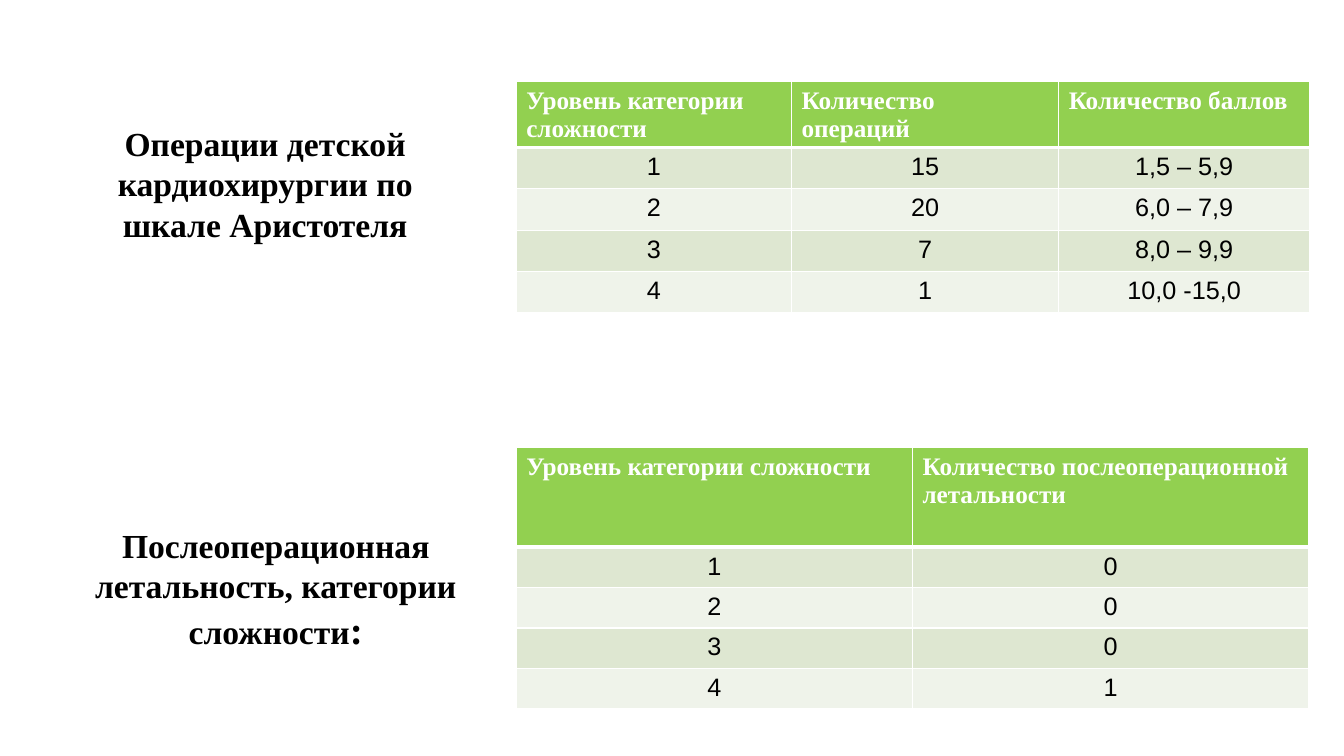
from dataclasses import dataclass

from lxml.etree import SubElement
from pptx import Presentation
from pptx.dml.color import RGBColor
from pptx.enum.text import MSO_ANCHOR, MSO_AUTO_SIZE, PP_ALIGN
from pptx.oxml.ns import qn
from pptx.slide import Slide
from pptx.table import _Cell
from pptx.text.text import TextFrame, _Paragraph
from pptx.util import Inches, Pt

SERIF, SANS = "Times New Roman", "Arial"
BLACK, WHITE, GREEN = "000000", "FFFFFF", "92D050"
BANDS = ("DEE7D1", "EFF3EA")
TABLE_LEFT = 5.12


@dataclass(frozen=True)
class ScaleTable:
    top: float
    widths: tuple[float, ...]
    header_height: float
    row_height: float
    rows: tuple[tuple[str, ...], ...]


MORTALITY = ScaleTable(4.44, (3.93, 3.93), 0.99, 0.4, (
    ("Уровень категории сложности", "Количество послеоперационной летальности"),
    ("1", "0"),
    ("2", "0"),
    ("3", "0"),
    ("4", "1"),
))
OPERATIONS = ScaleTable(0.81, (2.73, 2.65, 2.49), 0.65, 0.41, (
    ("Уровень категории сложности", "Количество операций", "Количество баллов"),
    ("1", "15", "1,5 – 5,9"),
    ("2", "20", "6,0 – 7,9"),
    ("3", "7", "8,0 – 9,9"),
    ("4", "1", "10,0 -15,0"),
))


def color(value: str) -> RGBColor:
    return RGBColor.from_string(value)


def add_span(para: _Paragraph, text: str, size: float, font: str, ink: str, bold: bool) -> None:
    span = para.add_run()
    span.text = text
    span.font.size = Pt(size)
    span.font.name = font
    span.font.bold = bold
    span.font.color.rgb = color(ink)


def fill_caption(frame: TextFrame, anchor: MSO_ANCHOR, spans: tuple[tuple[str, float], ...]) -> None:
    frame.word_wrap = True
    frame.auto_size = MSO_AUTO_SIZE.NONE
    frame.vertical_anchor = anchor
    para = frame.paragraphs[0]
    para.alignment = PP_ALIGN.CENTER
    for text, size in spans:
        add_span(para, text, size, SERIF, BLACK, True)


def set_borders(cell: _Cell, top: float, bottom: float) -> None:
    """Draw white cell edges; top and bottom are widths in points."""
    properties = cell._tc.get_or_add_tcPr()
    for side, width in (("L", 1), ("R", 1), ("T", top), ("B", bottom)):
        line = SubElement(properties, qn(f"a:ln{side}"), w=str(Pt(width)))
        fill = SubElement(line, qn("a:solidFill"))
        SubElement(fill, qn("a:srgbClr"), val=WHITE)


def add_scale_table(slide: Slide, data: ScaleTable) -> None:
    heights = [data.header_height] + [data.row_height] * (len(data.rows) - 1)
    table = slide.shapes.add_table(
        len(data.rows), len(data.widths), Inches(TABLE_LEFT), Inches(data.top),
        Inches(sum(data.widths)), Inches(sum(heights)),
    ).table
    for column, width in zip(table.columns, data.widths):
        column.width = Inches(width)
    for index, (height, texts) in enumerate(zip(heights, data.rows)):
        table.rows[index].height = Inches(height)
        header = index == 0
        for column_index, text in enumerate(texts):
            cell = table.cell(index, column_index)
            set_borders(cell, 3 if index == 1 else 1, 3 if header else 1)
            cell.fill.solid()
            cell.fill.fore_color.rgb = color(GREEN if header else BANDS[(index - 1) % 2])
            para = cell.text_frame.paragraphs[0]
            para.alignment = PP_ALIGN.LEFT if header else PP_ALIGN.CENTER
            add_span(para, text, 18, SERIF if header else SANS, WHITE if header else BLACK, header)


def main() -> None:
    deck = Presentation()
    deck.slide_width, deck.slide_height = Inches(13.33), Inches(7.5)
    page = deck.slides.add_slide(deck.slide_layouts[5])

    title = page.shapes.title
    title.left, title.top = Inches(0.62), Inches(1.85)
    title.width, title.height = Inches(4.12), Inches(0.62)
    title.text_frame.margin_right = Inches(0.2)
    fill_caption(title.text_frame, MSO_ANCHOR.BOTTOM,
                 (("Операции детской кардиохирургии по шкале Аристотеля", 24),))

    add_scale_table(page, MORTALITY)
    add_scale_table(page, OPERATIONS)

    box = page.shapes.add_textbox(Inches(0.73), Inches(5.17), Inches(4.01), Inches(1.34))
    fill_caption(box.text_frame, MSO_ANCHOR.MIDDLE,
                 (("Послеоперационная летальность, категории сложности", 24), (":", 28)))

    deck.save("out.pptx")


if __name__ == "__main__":
    main()
